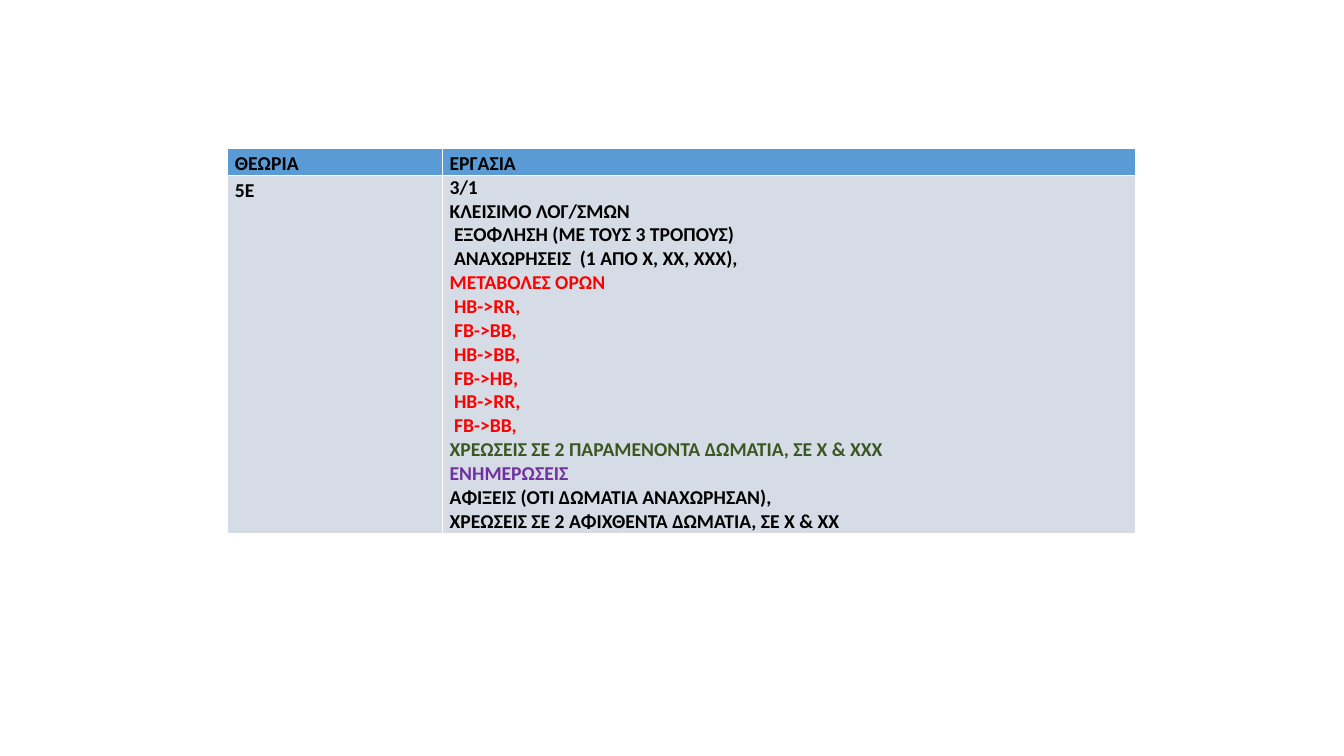
import pptx
import pptx.util
import pptx.dml.color
import pptx.enum.text
import pptx.oxml
import pptx.oxml.ns

Inches = pptx.util.Inches
Color = pptx.dml.color.RGBColor
ALIGN = pptx.enum.text.PP_ALIGN

BLACK = Color(0x00, 0x00, 0x00)
WHITE = Color(0xFF, 0xFF, 0xFF)
BLUE = Color(0x5B, 0x9B, 0xD5)
GREY = Color(0xD6, 0xDC, 0xE5)
RED = Color(0xFF, 0x00, 0x00)
GREEN = Color(0x38, 0x57, 0x23)
PURPLE = Color(0x70, 0x30, 0xA0)

TASKS = [
    (BLACK, [
        "3/1",
        "ΚΛΕΙΣΙΜΟ ΛΟΓ/ΣΜΩΝ",
        " ΕΞΟΦΛΗΣΗ (ΜΕ ΤΟΥΣ 3 ΤΡΟΠΟΥΣ)",
        " ΑΝΑΧΩΡΗΣΕΙΣ  (1 ΑΠΟ Χ, ΧΧ, ΧΧΧ),",
    ]),
    (RED, [
        "ΜΕΤΑΒΟΛΕΣ ΟΡΩΝ",
        " ΗΒ->RR,",
        " FB->BB,",
        " HB->BB,",
        " FB->HB,",
        " HB->RR,",
        " FB->BB,",
    ]),
    (GREEN, ["ΧΡΕΩΣΕΙΣ ΣΕ 2 ΠΑΡΑΜΕΝΟΝΤΑ ΔΩΜΑΤΙΑ, ΣΕ Χ & ΧΧΧ"]),
    (PURPLE, ["ΕΝΗΜΕΡΩΣΕΙΣ"]),
    (BLACK, [
        "ΑΦΙΞΕΙΣ (ΟΤΙ ΔΩΜΑΤΙΑ ΑΝΑΧΩΡΗΣΑΝ),",
        "ΧΡΕΩΣΕΙΣ ΣΕ 2 ΑΦΙΧΘΕΝΤΑ ΔΩΜΑΤΙΑ, ΣΕ Χ & ΧΧ",
    ]),
]


def write(para, text, color=BLACK, size=14, align=None, space=None):
    para.alignment = align
    para.line_spacing = space
    run = para.add_run()
    run.text = text
    font = run.font
    font.name = "Calibri"
    font.size = pptx.util.Pt(size)
    font.bold = True
    font.color.rgb = color


def edge(cell, color=WHITE, width=1):
    props = cell._tc.get_or_add_tcPr()
    for side in "LRTB":
        props.append(pptx.oxml.parse_xml(
            f'<a:ln{side} {pptx.oxml.ns.nsdecls("a")} w="{pptx.util.Pt(width)}">'
            f'<a:solidFill><a:srgbClr val="{color}"/></a:solidFill>'
            f'</a:ln{side}>'))


def style(cell, fill):
    edge(cell)
    cell.fill.solid()
    cell.fill.fore_color.rgb = fill
    cell.margin_left = cell.margin_right = Inches(0.07)
    cell.margin_top = cell.margin_bottom = 0


def label(cell, text):
    write(cell.text_frame.paragraphs[0], text, align=ALIGN.JUSTIFY, space=1.15)


def fill_tasks(cell):
    frame = cell.text_frame
    lines = [(text, color) for color, texts in TASKS for text in texts]
    for index, (text, color) in enumerate(lines):
        para = frame.add_paragraph() if index else frame.paragraphs[0]
        write(para, text, color=color)


def add_plan(slide):
    heights = [Inches(0.27), Inches(3.54)]
    widths = [Inches(2.13), Inches(6.87)]
    table = slide.shapes.add_table(
        2, 2, Inches(2.26), Inches(1.47), sum(widths), sum(heights)).table
    for column, width in zip(table.columns, widths):
        column.width = width
    for row, height, fill in zip(table.rows, heights, [BLUE, GREY]):
        row.height = height
        for cell in row.cells:
            style(cell, fill)
    label(table.cell(0, 0), "ΘΕΩΡΙΑ")
    label(table.cell(0, 1), "ΕΡΓΑΣΙΑ")
    label(table.cell(1, 0), "5E")
    fill_tasks(table.cell(1, 1))


def main():
    deck = pptx.Presentation()
    deck.slide_width = Inches(13.33)
    deck.slide_height = Inches(7.5)
    add_plan(deck.slides.add_slide(deck.slide_layouts[6]))
    deck.save("out.pptx")


if __name__ == "__main__":
    main()
